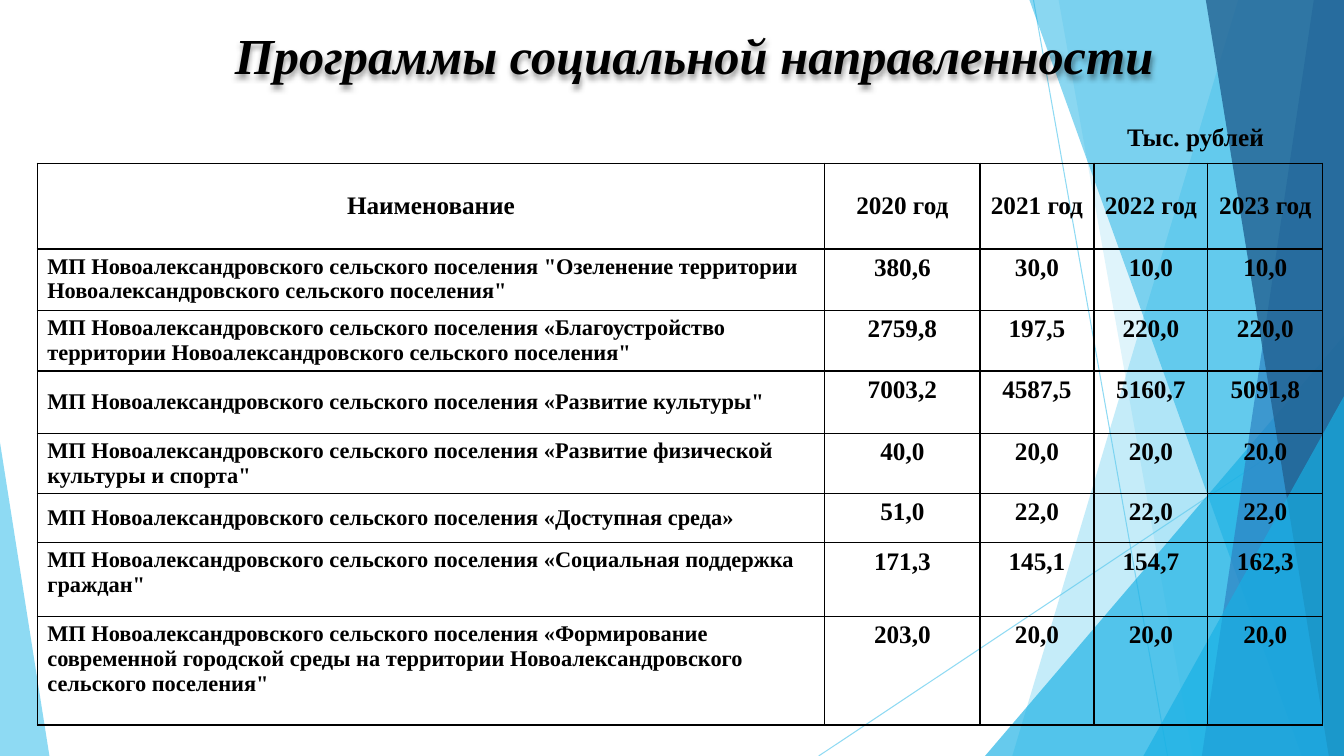
"""Builds a one-slide table of social programme spending over a faceted backdrop."""
from lxml import etree
from pptx import Presentation
from pptx import util as u
from pptx.dml.color import RGBColor
from pptx.enum import shapes, text
from pptx.oxml import parse_xml
from pptx.oxml.ns import nsdecls, qn

THEME = {
    "font": "Times New Roman", "ink": "000000", "sky": "5FCBEF", "cyan": "17B0E4",
    "blue": "2E83C3", "navy": "226292",
    "title": 36, "body": 18, "name": 16, "rule": 0.75, "border": 1,
}
W, H = 13.33, 7.5

TITLE = "Программы социальной направленности"
UNITS = "Тыс. рублей"
MP = "МП Новоалександровского сельского поселения "
HEADER = ("Наименование", "2020 год", "2021 год", "2022 год", "2023 год")
PROGRAMMES = [
    ('"Озеленение территории Новоалександровского сельского поселения"',
     "380,6", "30,0", "10,0", "10,0"),
    ('«Благоустройство территории Новоалександровского сельского поселения"',
     "2759,8", "197,5", "220,0", "220,0"),
    ('«Развитие культуры"', "7003,2", "4587,5", "5160,7", "5091,8"),
    ('«Развитие физической культуры и спорта"', "40,0", "20,0", "20,0", "20,0"),
    ("«Доступная среда»", "51,0", "22,0", "22,0", "22,0"),
    ('«Социальная поддержка граждан"', "171,3", "145,1", "154,7", "162,3"),
    ('«Формирование современной городской среды на территории '
     'Новоалександровского сельского поселения"', "203,0", "20,0", "20,0", "20,0"),
]
TOP_NAMES = (1, 6, 7)
COLS = (7.81, 1.54, 1.13, 1.13, 1.14)
ROWS = (0.85, 0.61, 0.6, 0.62, 0.59, 0.49, 0.73, 1.08)
TABLE_AT = (0.37, 1.62)

RAYS = [((10.25, 0), (11.58, H)), ((W, 4.03), (8.12, H))]
FACETS = [
    ("band", (12.28, 10.04), "sky", 36),
    ("band", (10.5, 11.83), "sky", 20),
    ("triangle", (9.77, 3.33, 3.56, 4.17, 1), "cyan", 66),
    ("band", (10.21, 12.91), "cyan", 50),
    ("band", (13.03, 11.92), "blue", 70),
    ("band", (11.96, 13.18), "navy", 80),
    ("triangle", (11.34, 3.93, 1.99, 3.57, 1), "cyan", 66),
    ("triangle", (0, 4.39, 0.49, 3.11, 0), "sky", 70),
]


def box(*lengths):
    return [u.Inches(v) for v in lengths]


def rgb(key):
    return RGBColor.from_string(THEME[key])


def set_alpha(sp, percent):
    for clr in sp._element.spPr.iter(qn("a:srgbClr")):
        etree.SubElement(clr, qn("a:alpha")).set("val", str(percent * 1000))


def write(tf, content, size, align, **extra):
    p = tf.paragraphs[0]
    p.alignment = align
    r = p.add_run()
    r.text = content
    style = {"name": THEME["font"], "size": u.Pt(THEME[size]), "bold": True, **extra}
    for key, value in style.items():
        setattr(r.font, key, value)
    r.font.color.rgb = rgb("ink")


def add_ray(s, start, end):
    c = s.shapes.add_connector(shapes.MSO_CONNECTOR.STRAIGHT, *box(*start, *end))
    c.line.color.rgb = rgb("sky")
    c.line.width = u.Pt(THEME["rule"])
    set_alpha(c, 70)
    etree.SubElement(c._element.spPr, qn("a:effectLst"))


def add_facet(s, kind, geometry, colour, opacity):
    if kind == "band":
        top, bottom = geometry
        fb = s.shapes.build_freeform(*box(top, 0))
        fb.add_line_segments([box(W, 0), box(W, H), box(bottom, H)], close=True)
        sp = fb.convert_to_shape()
    else:
        *frame, apex = geometry
        sp = s.shapes.add_shape(shapes.MSO_SHAPE.ISOSCELES_TRIANGLE, *box(*frame))
        sp.adjustments[0] = apex
    sp.shadow.inherit = False
    sp.fill.solid()
    sp.fill.fore_color.rgb = rgb(colour)
    sp.line.fill.background()
    set_alpha(sp, opacity)


def add_title(s):
    sp = s.shapes.add_shape(shapes.MSO_SHAPE.ROUNDED_RECTANGLE, *box(1.04, 0, 11.69, 1.07))
    sp.fill.background()
    sp.line.fill.background()
    sp.shadow.inherit = False
    sp._element.spPr.find(qn("a:effectLst")).append(parse_xml(
        f'<a:outerShdw {nsdecls("a")} blurRad="50800" dist="38100" dir="5400000">'
        f'<a:srgbClr val="{THEME["ink"]}"><a:alpha val="40000"/></a:srgbClr></a:outerShdw>'))
    tf = sp.text_frame
    tf.word_wrap = True
    tf.vertical_anchor = text.MSO_ANCHOR.MIDDLE
    for side in ("left", "top", "right", "bottom"):
        setattr(tf, f"margin_{side}", 0)
    write(tf, TITLE, "title", text.PP_ALIGN.CENTER, italic=True)


def set_borders(cell):
    tc_pr = cell._tc.get_or_add_tcPr()
    for i, side in enumerate("LRTB"):
        tc_pr.insert(i, parse_xml(
            f'<a:ln{side} {nsdecls("a")} w="{u.Pt(THEME["border"])}"><a:solidFill>'
            f'<a:srgbClr val="{THEME["ink"]}"/></a:solidFill></a:ln{side}>'))


def add_table(s):
    rows = [HEADER] + [(MP + name, *values) for name, *values in PROGRAMMES]
    frame = box(*TABLE_AT, sum(COLS), sum(ROWS))
    table = s.shapes.add_table(len(ROWS), len(COLS), *frame).table
    for col, width in zip(table.columns, COLS):
        col.width = u.Inches(width)
    for row, height in zip(table.rows, ROWS):
        row.height = u.Inches(height)
    for i, values in enumerate(rows):
        for j, value in enumerate(values):
            cell = table.cell(i, j)
            is_name = i > 0 and j == 0
            middle = i == 0 or (is_name and i not in TOP_NAMES)
            cell.vertical_anchor = text.MSO_ANCHOR.MIDDLE if middle else text.MSO_ANCHOR.TOP
            cell.fill.background()
            set_borders(cell)
            write(cell.text_frame, value, "name" if is_name else "body",
                  text.PP_ALIGN.LEFT if is_name else text.PP_ALIGN.CENTER)


def main():
    prs = Presentation()
    prs.slide_width, prs.slide_height = box(W, H)
    s = prs.slides.add_slide(prs.slide_layouts[6])
    for ray in RAYS:
        add_ray(s, *ray)
    for facet in FACETS:
        add_facet(s, *facet)
    add_title(s)
    add_table(s)
    units = s.shapes.add_textbox(*box(11.08, 1.15, 1.99, 0.4))
    units.text_frame.word_wrap = True
    write(units.text_frame, UNITS, "body", text.PP_ALIGN.LEFT)
    prs.save("out.pptx")


if __name__ == "__main__":
    main()
